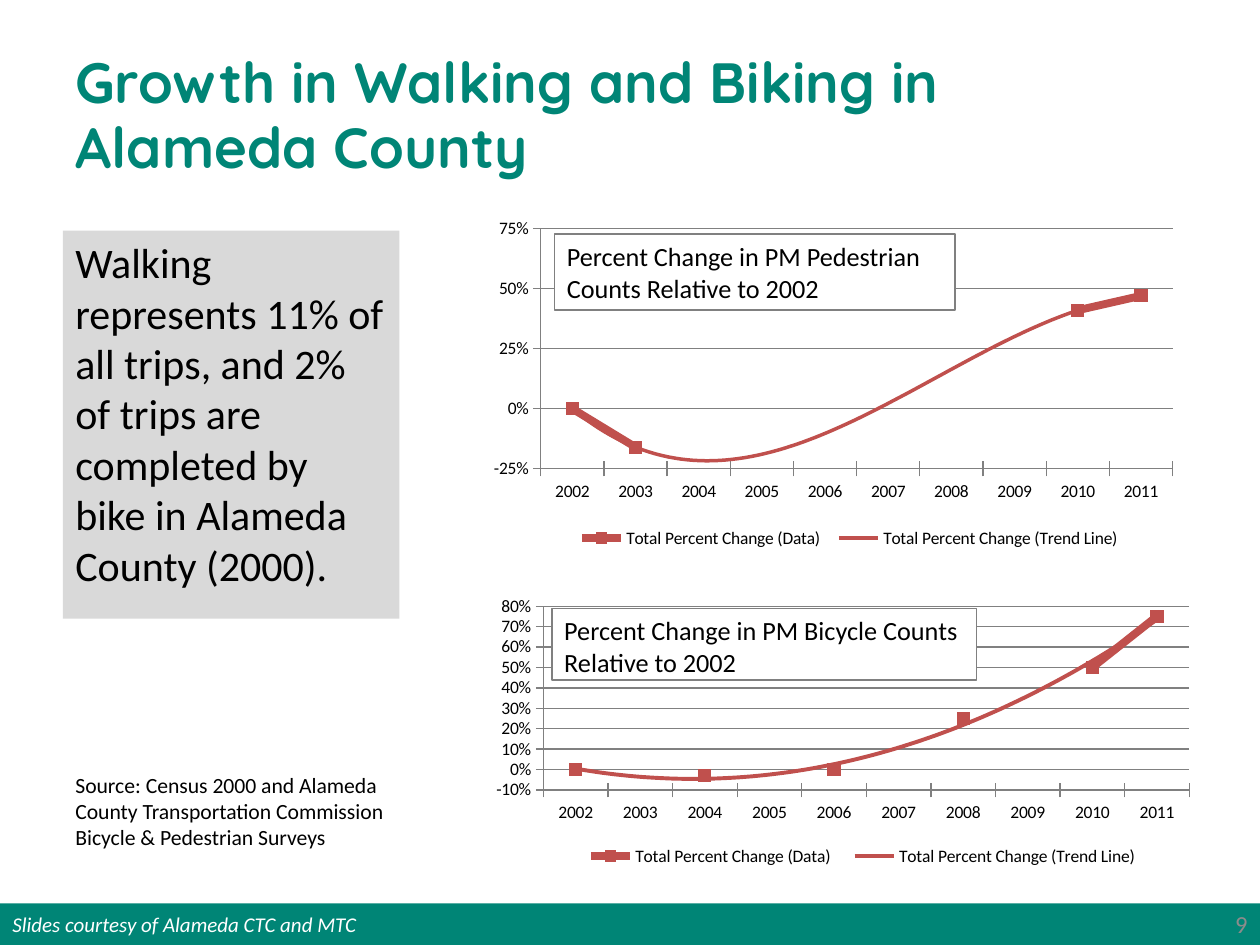
from dataclasses import dataclass

from lxml.etree import SubElement
from pptx import Presentation
from pptx.chart.data import CategoryChartData
from pptx.dml.color import RGBColor
from pptx.enum.chart import (XL_AXIS_CROSSES, XL_CHART_TYPE, XL_LEGEND_POSITION,
                             XL_MARKER_STYLE, XL_TICK_LABEL_POSITION, XL_TICK_MARK)
from pptx.enum.shapes import MSO_SHAPE
from pptx.enum.text import MSO_ANCHOR, PP_ALIGN
from pptx.oxml.ns import qn
from pptx.util import Inches, Pt


@dataclass(frozen=True)
class Theme:
    teal: str = "008576"
    panel: str = "D9D9D9"
    white: str = "FFFFFF"
    black: str = "000000"
    page_gray: str = "8C8C8C"
    rule_gray: str = "808080"
    red: str = "C0504D"
    body_font: str = "Calibri"
    title_font: str = "Quicksand"
    title_size: float = 32.4
    body_size: float = 24
    caption_size: float = 15
    page_size: float = 14
    source_size: float = 12.4
    footer_size: float = 12
    chart_size: float = 10


def apply(target, **formats):
    for name, value in formats.items():
        setattr(target, name, value)


def add_value(parent, tag, value):
    SubElement(parent, qn(tag)).set("val", str(value))


def make_layout(parent, box, inner=False):
    """Append a manual chart layout, given as fractions of the chart."""
    layout = SubElement(parent, qn("c:layout"))
    manual = SubElement(layout, qn("c:manualLayout"))
    if inner:
        add_value(manual, "c:layoutTarget", "inner")
    for axis in "xy":
        add_value(manual, f"c:{axis}Mode", "edge")
    for side, fraction in zip("xywh", box):
        add_value(manual, f"c:{side}", fraction)
    return layout


class SlideBuilder:
    def __init__(self, slide, theme):
        self.slide = slide
        self.theme = theme

    def fill_text(self, shape, text, size, color=None, font=None, bold=False, italic=False,
                  anchor=MSO_ANCHOR.TOP, align=PP_ALIGN.LEFT, spacing=None, after=None):
        frame = shape.text_frame
        apply(frame, word_wrap=True, vertical_anchor=anchor)
        paragraph = frame.paragraphs[0]
        apply(paragraph, text=text, alignment=align, line_spacing=spacing, space_after=after)
        apply(paragraph.font, size=Pt(size), name=font or self.theme.body_font,
              bold=bold, italic=italic)
        paragraph.font.color.rgb = RGBColor.from_string(color or self.theme.black)

    def text(self, box, text, size, **formats):
        shape = self.slide.shapes.add_textbox(*map(Inches, box))
        self.fill_text(shape, text, size, **formats)

    def panel(self, box, fill, text, size, outline=None, **formats):
        shape = self.slide.shapes.add_shape(MSO_SHAPE.RECTANGLE, *map(Inches, box))
        shape.shadow.inherit = False
        shape.fill.solid()
        shape.fill.fore_color.rgb = RGBColor.from_string(fill)
        if outline:
            self.stroke(shape.line, outline, 1)
        else:
            shape.line.fill.background()
        self.fill_text(shape, text, size, **formats)

    def stroke(self, line, color, width):
        line.color.rgb = RGBColor.from_string(color)
        line.width = Pt(width)

    def trend_chart(self, box, years, changes, scale, plot_box, legend_box, order, trend_width):
        data = CategoryChartData(number_format="0%")
        data.categories = years
        data.add_series("Total Percent Change (Data)", changes)
        chart = self.slide.shapes.add_chart(
            XL_CHART_TYPE.LINE_MARKERS, *map(Inches, box), data).chart
        apply(chart, has_title=False, has_legend=True)
        apply(chart.font, size=Pt(self.theme.chart_size), name=self.theme.body_font)
        chart.font.color.rgb = RGBColor.from_string(self.theme.black)
        chart.plots[0].vary_by_categories = False

        # Axes
        low, high, step = scale
        apply(chart.value_axis, minimum_scale=low, maximum_scale=high, major_unit=step,
              has_major_gridlines=True, crosses=XL_AXIS_CROSSES.MINIMUM)
        apply(chart.value_axis.tick_labels, number_format="0%", number_format_is_linked=False)
        self.stroke(chart.value_axis.major_gridlines.format.line, self.theme.rule_gray, 0.75)
        for axis in (chart.category_axis, chart.value_axis):
            apply(axis, major_tick_mark=XL_TICK_MARK.CROSS, minor_tick_mark=XL_TICK_MARK.NONE,
                  tick_label_position=XL_TICK_LABEL_POSITION.LOW)
            self.stroke(axis.format.line, self.theme.rule_gray, 0.75)

        # Data line and markers
        series = chart.plots[0].series[0]
        series.smooth = False
        self.stroke(series.format.line, self.theme.red, 4.5)
        apply(series.marker, style=XL_MARKER_STYLE.SQUARE, size=7)
        series.marker.format.fill.solid()
        series.marker.format.fill.fore_color.rgb = RGBColor.from_string(self.theme.red)
        self.stroke(series.marker.format.line, self.theme.red, 0.75)
        self.trend_line(series, order, trend_width)

        # Plot and legend positions
        plot_area = chart._chartSpace.chart.plotArea
        for old_layout in plot_area.findall(qn("c:layout")):
            plot_area.remove(old_layout)
        plot_area.insert(0, make_layout(plot_area, plot_box, inner=True))
        apply(chart.legend, position=XL_LEGEND_POSITION.BOTTOM, include_in_layout=False)
        legend = chart.legend._element
        for old_layout in legend.findall(qn("c:layout")):
            legend.remove(old_layout)
        legend.find(qn("c:legendPos")).addnext(make_layout(legend, legend_box))

    def trend_line(self, series, order, width):
        element = series._element
        trend = SubElement(element, qn("c:trendline"))
        SubElement(trend, qn("c:name")).text = "Total Percent Change (Trend Line)"
        line = SubElement(SubElement(trend, qn("c:spPr")), qn("a:ln"), w=str(Pt(width)))
        add_value(SubElement(line, qn("a:solidFill")), "a:srgbClr", self.theme.red)
        for tag, value in (("c:trendlineType", "poly"), ("c:order", order),
                           ("c:dispRSqr", 0), ("c:dispEq", 0)):
            add_value(trend, tag, value)
        element.find(qn("c:cat")).addprevious(trend)


def main():
    deck = Presentation()
    apply(deck, slide_width=Inches(10), slide_height=Inches(7.5))
    theme = Theme()
    builder = SlideBuilder(deck.slides.add_slide(deck.slide_layouts[6]), theme)

    # Footer and page number
    builder.panel((0, 7.17, 10, 0.33), theme.teal, "Slides courtesy of Alameda CTC and MTC",
                  theme.footer_size, color=theme.white, italic=True, anchor=MSO_ANCHOR.MIDDLE)
    builder.text((9.5, 7.17, 0.5, 0.33), "9", theme.page_size, color=theme.page_gray,
                 anchor=MSO_ANCHOR.MIDDLE, align=PP_ALIGN.RIGHT)

    # Title, key fact and source
    builder.text((0.5, 0.3, 9, 1.25), "Growth in Walking and Biking in Alameda County",
                 theme.title_size, color=theme.teal, font=theme.title_font, bold=True,
                 anchor=MSO_ANCHOR.MIDDLE, spacing=0.96)
    builder.panel((0.5, 1.83, 2.67, 3.08), theme.panel,
                  "Walking represents 11% of all trips, and 2% of trips are completed "
                  "by bike in Alameda County (2000).", theme.body_size)
    builder.text((0.5, 6.08, 3, 0.58),
                 "Source: Census 2000 and Alameda County Transportation Commission "
                 "Bicycle & Pedestrian Surveys", theme.source_size)

    # Charts with their captions
    years = [str(year) for year in range(2002, 2012)]
    pedestrian = {2002: 0, 2003: -0.16, 2010: 0.41, 2011: 0.47}
    bicycle = {2002: 0, 2004: -0.03, 2006: 0, 2008: 0.25, 2010: 0.5, 2011: 0.75}
    panels = (
        ("Pedestrian", pedestrian, (3.92, 1.67, 5.61, 2.89), (-0.25, 0.75, 0.25),
         (0.06, 0.05, 0.9, 0.66), (0.1, 0.86, 0.8, 0.08), 3, 2, (4.4, 1.86, 3.18, 0.6)),
        ("Bicycle", bicycle, (3.91, 4.72, 5.76, 2.28), (-0.1, 0.8, 0.1),
         (0.07, 0.04, 0.89, 0.64), (0.11, 0.86, 0.8, 0.1), 2, 2.25, (4.38, 4.83, 3.37, 0.57)),
    )
    for mode, counts, box, scale, plot_box, legend_box, order, width, caption_box in panels:
        changes = [counts.get(int(year)) for year in years]
        builder.trend_chart(box, years, changes, scale, plot_box, legend_box, order, width)
        builder.panel(caption_box, theme.white,
                      f"Percent Change in PM {mode} Counts Relative to 2002",
                      theme.caption_size, outline=theme.rule_gray, after=Pt(6))

    deck.save("out.pptx")


if __name__ == "__main__":
    main()
